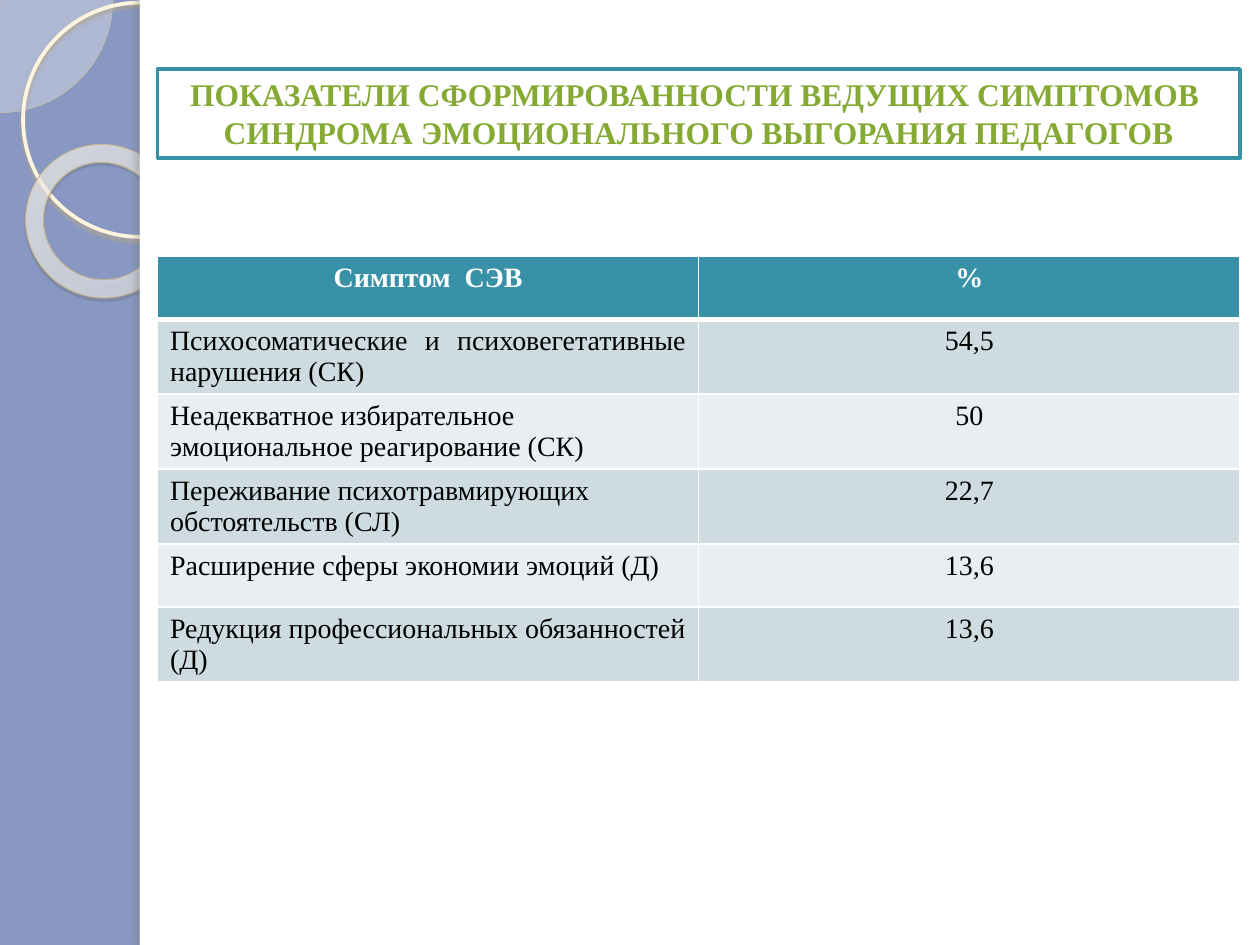
from lxml.etree import SubElement
from pptx import Presentation
from pptx.dml.color import RGBColor
from pptx.enum.shapes import MSO_SHAPE as Preset
from pptx.enum.text import MSO_ANCHOR as Anchor, PP_ALIGN as Align
from pptx.oxml import parse_xml
from pptx.oxml.ns import nsdecls, qn
from pptx.util import Pt

COLORS = {
    "side": "8898C3", "white": "FFFFFF", "black": "000000",
    "teal": "3891A7", "green": "84AA33", "band": "CEDCE1", "light": "E8EEF1",
    "pie": "FEFAF4", "pie_line": "D3C39F",
    "ring_line": "FFF5DE", "ring_shadow": "B0A68F",
    "donut_line": "C7B893", "donut_shadow": "5A5444", "edge_shadow": "736F63",
    "donut_in": "FFFCF6", "donut_mid": "FFFEFB", "donut_out": "F0D28E",
}
TITLE = [
    "ПОКАЗАТЕЛИ СФОРМИРОВАННОСТИ ВЕДУЩИХ СИМПТОМОВ ",
    "СИНДРОМА ЭМОЦИОНАЛЬНОГО ВЫГОРАНИЯ ПЕДАГОГОВ",
]
ROWS = [
    ("Симптом  СЭВ", "%"),
    ("Психосоматические и психовегетативные нарушения (СК)", "54,5"),
    ("Неадекватное избирательное эмоциональное реагирование (СК)", "50"),
    ("Переживание психотравмирующих обстоятельств (СЛ)", "22,7"),
    ("Расширение сферы экономии эмоций (Д)", "13,6"),
    ("Редукция профессиональных обязанностей (Д)", "13,6"),
]


def rgb(name):
    """Return the palette colour of that name."""
    return RGBColor.from_string(COLORS[name])


def add_color(parent, name, alpha=100):
    """Add a colour with an opacity in percent to an XML element."""
    color = SubElement(parent, qn("a:srgbClr"), val=COLORS[name])
    SubElement(color, qn("a:alpha"), val=str(alpha * 1000))


def add_shape(page, preset, box, fill=None, line=None, shadow=None):
    """Add a preset shape with a plain fill, an outline and a shadow."""
    shape = page.shapes.add_shape(preset, *map(Pt, box))
    shape.shadow.inherit = False
    if fill:
        shape.fill.solid()
        shape.fill.fore_color.rgb = rgb(fill)
    else:
        shape.fill.background()
    if line:
        name, width = line
        shape.line.color.rgb = rgb(name)
        shape.line.width = Pt(width)
    else:
        shape.line.fill.background()
    if shadow:
        name, alpha, blur, distance, angle = shadow
        effects = shape._element.spPr.find(qn("a:effectLst"))
        outer = SubElement(
            effects, qn("a:outerShdw"), blurRad=str(Pt(blur)), dist=str(Pt(distance)),
            dir=str(angle * 60000), algn="tl", rotWithShape="0")
        add_color(outer, name, alpha)
    return shape


def fill_gradient(shape, stops):
    """Replace the solid fill of a shape by a circular gradient."""
    gradient = parse_xml(f'<a:gradFill {nsdecls("a")} rotWithShape="1"/>')
    stop_list = SubElement(gradient, qn("a:gsLst"))
    for position, name, alpha in stops:
        stop = SubElement(stop_list, qn("a:gs"), pos=str(position * 1000))
        add_color(stop, name, alpha)
    circle = SubElement(gradient, qn("a:path"), {"path": "circle"})
    SubElement(circle, qn("a:fillToRect"), l="-408000", t="-50000", r="508000", b="150000")
    properties = shape._element.spPr
    properties.replace(properties.find(qn("a:solidFill")), gradient)


def write(para, text, align, **format_values):
    """Write one aligned span of text into a paragraph."""
    para.alignment = align
    span = para.add_run()
    span.text = text
    color = format_values.pop("color")
    for name, value in {"name": "Times New Roman", **format_values}.items():
        setattr(span.font, name, value)
    span.font.color.rgb = rgb(color)


def draw_side(page, box):
    """Draw the round ornaments and the white sheet beside the coloured strip."""
    left, top, width, height = box
    pie = add_shape(page, Preset.PIE, (left - 64.4, top - 64.4, 128.8, 128.8),
                    "pie", ("pie_line", 0.25))
    pie.adjustments[0], pie.adjustments[1] = 0, 54
    solid = pie._element.spPr.find(qn("a:solidFill"))
    SubElement(solid[0], qn("a:alpha"), val="33000")

    add_shape(page, Preset.OVAL, (left + 13.2, top + 1.5, 133.9, 133.9),
              line=("ring_line", 2.15), shadow=("ring_shadow", 85, 2, 2, 90))

    donut = add_shape(page, Preset.DONUT, (left + 14.4, top + 82.8, 88.6, 87.1),
                      "donut_in", ("donut_line", 0.58), ("donut_shadow", 35, 1, 1.2, 75))
    donut.rotation = 38.6
    donut.adjustments[0] = 0.118
    fill_gradient(donut, [(0, "donut_in", 70), (70, "donut_mid", 55), (100, "donut_out", 60)])

    sheet = left + 79.9
    add_shape(page, Preset.RECTANGLE, (sheet, top, width - 79.9, height), "white")
    add_shape(page, Preset.RECTANGLE, (sheet, top, 5.8, height), "white",
              shadow=("edge_shadow", 25, 3, 3, 180))


def draw_title(page, box):
    """Draw the framed two-line title."""
    shape = add_shape(page, Preset.RECTANGLE, box, "white", ("teal", 2))
    frame = shape.text_frame
    for name, value in {"word_wrap": True, "vertical_anchor": Anchor.TOP}.items():
        setattr(frame, name, value)
    for index, text in enumerate(TITLE):
        para = frame.add_paragraph() if index else frame.paragraphs[0]
        write(para, text, Align.CENTER, size=Pt(18), bold=True, color="green")


def set_borders(cell, bottom):
    """Give a cell white borders, the bottom one of the given width."""
    properties = cell._tc.get_or_add_tcPr()
    for tag, width in {"lnL": 1, "lnR": 1, "lnT": 1, "lnB": bottom}.items():
        border = SubElement(properties, qn(f"a:{tag}"), w=str(Pt(width)))
        add_color(SubElement(border, qn("a:solidFill")), "white")


def draw_table(page, box):
    """Draw the table of symptoms and their shares."""
    table = page.shapes.add_table(len(ROWS), 2, *map(Pt, box)).table
    for row, texts in enumerate(ROWS):
        header = row == 0
        fill = "teal" if header else "band" if row % 2 else "light"
        for column, text in enumerate(texts):
            cell = table.cell(row, column)
            set_borders(cell, 3 if header else 1)
            cell.fill.solid()
            cell.fill.fore_color.rgb = rgb(fill)
            align = Align.CENTER if header or column else Align.JUSTIFY if row == 1 else Align.LEFT
            write(cell.text_frame.paragraphs[0], text, align, size=Pt(16), bold=header,
                  color="white" if header else "black")


def main():
    """Build the slide and save it."""
    deck = Presentation()
    deck.slide_width, deck.slide_height = Pt(720), Pt(540)
    page = deck.slides.add_slide(deck.slide_layouts[6])
    page.background.fill.solid()
    page.background.fill.fore_color.rgb = rgb("side")
    draw_side(page, (0, 0, 720, 540))
    draw_title(page, (90, 39.4, 618.6, 51))
    draw_table(page, (90, 146.4, 618.6, 36 * len(ROWS)))
    deck.save("out.pptx")


if __name__ == "__main__":
    main()
